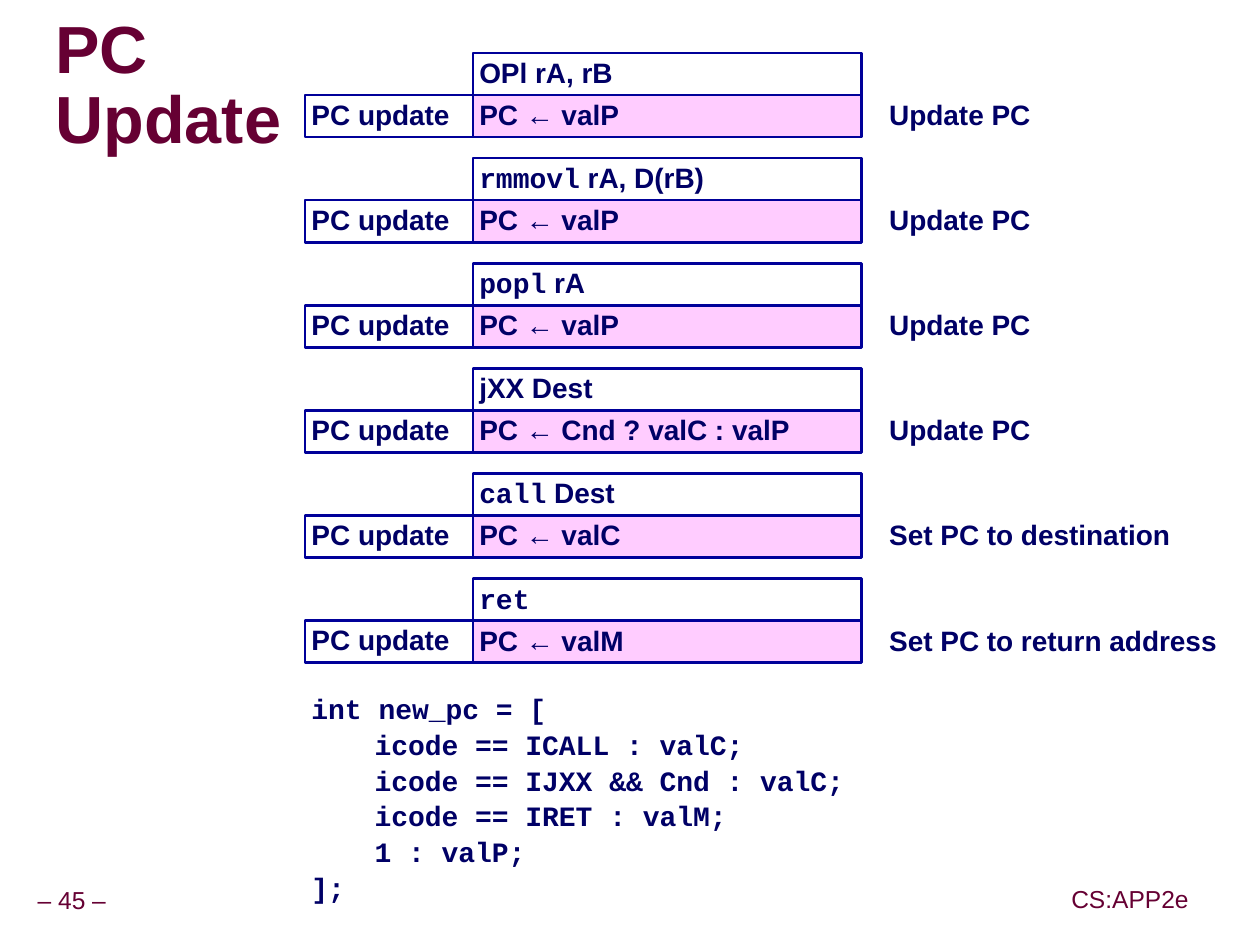
"""Build the PC Update slide: the update step of six instructions and its HCL code."""
import pptx
import pptx.dml.color
import pptx.enum.shapes
import pptx.enum.text
import pptx.util
from lxml import etree
from pptx.util import Inches, Pt

RGBColor = pptx.dml.color.RGBColor
Align = pptx.enum.text.PP_ALIGN
Anchor = pptx.enum.text.MSO_ANCHOR

MAROON = RGBColor(0x66, 0x00, 0x33)
NAVY = RGBColor(0x00, 0x00, 0x66)
BORDER = RGBColor(0x00, 0x00, 0x99)
PINK = RGBColor(0xFF, 0xCC, 0xFF)
SANS = "Arial"
MONO = "Courier New"

TITLE = "PC\vUpdate"
STAGE = "PC update"
INSTRUCTIONS = [
    ([("OPl rA, rB", SANS)], "PC ← valP", "Update PC"),
    ([("rmmovl", MONO), (" rA, D(rB)", SANS)], "PC ← valP", "Update PC"),
    ([("popl", MONO), (" rA", SANS)], "PC ← valP", "Update PC"),
    ([("jXX Dest", SANS)], "PC ← Cnd ? valC : valP", "Update PC"),
    ([("call", MONO), (" Dest", SANS)], "PC ← valC", "Set PC to destination"),
    ([("ret", MONO)], "PC ← valM", "Set PC to return address"),
]
CODE = [
    "int new_pc = [",
    "\ticode == ICALL : valC;",
    "\ticode == IJXX && Cnd : valC;",
    "\ticode == IRET : valM;",
    "\t1 : valP;",
    "];",
]
FOOTERS = [("– 45 –", 0.24, 6.99, 0.66), ("CS:APP2e", 8.44, 6.98, 1.04)]

STAGE_LEFT, STAGE_WIDTH = 2.42, 1.33
STEP_LEFT, STEP_WIDTH = 3.75, 3.08
NOTE_LEFT = 7
FIRST_TOP = 0.42
ROW_HEIGHT = 1 / 3
GROUP_PITCH = 2.5 * ROW_HEIGHT


def set_frame(shape, anchor=Anchor.TOP, wrap=True, inset=0.05):
    """Set margins, anchor and wrapping, and return the text frame."""
    frame = shape.text_frame
    frame.margin_left = frame.margin_right = Inches(inset)
    frame.margin_top = frame.margin_bottom = Inches(inset)
    frame.vertical_anchor = anchor
    frame.word_wrap = wrap
    return frame


def format_paragraph(paragraph, font=SANS, size=16, color=NAVY, bold=True,
                     spacing=0.9, align=Align.LEFT):
    """Set the font and spacing of a whole paragraph."""
    paragraph.font.name = font
    paragraph.font.size = Pt(size)
    paragraph.font.bold = bold
    paragraph.font.color.rgb = color
    paragraph.line_spacing = spacing
    paragraph.alignment = align


def add_label(slide, left, top, width, height, text, anchor=Anchor.TOP,
              wrap=True, **style):
    """Add a text box with one paragraph."""
    box = slide.shapes.add_textbox(Inches(left), Inches(top), Inches(width), Inches(height))
    paragraph = set_frame(box, anchor, wrap).paragraphs[0]
    paragraph.text = text
    format_paragraph(paragraph, **style)


def add_cell(slide, left, top, width, runs, fill=None, anchor=Anchor.TOP):
    """Add a bordered rectangle holding runs of (text, font)."""
    cell = slide.shapes.add_shape(
        pptx.enum.shapes.MSO_SHAPE.RECTANGLE,
        Inches(left), Inches(top), Inches(width), Inches(ROW_HEIGHT))
    cell.shadow.inherit = False
    if fill is None:
        cell.fill.background()
    else:
        cell.fill.solid()
        cell.fill.fore_color.rgb = fill
    cell.line.color.rgb = BORDER
    cell.line.width = Pt(1.5)
    paragraph = set_frame(cell, anchor).paragraphs[0]
    format_paragraph(paragraph)
    for text, font in runs:
        run = paragraph.add_run()
        run.text = text
        run.font.name = font


def add_title(slide):
    """Fill the title and give its letters a grey shadow."""
    title = slide.shapes.title
    title.left, title.top = Inches(0.44), Inches(0.27)
    title.width, title.height = Inches(9.52), Inches(0.85)
    frame = set_frame(title, Anchor.MIDDLE, inset=0)
    frame.auto_size = pptx.enum.text.MSO_AUTO_SIZE.NONE
    paragraph = frame.paragraphs[0]
    paragraph.text = TITLE
    format_paragraph(paragraph, size=38, color=MAROON, spacing=0.87)
    namespace = "http://schemas.openxmlformats.org/drawingml/2006/main"
    for run in paragraph.runs:
        run.font.color.rgb = MAROON
        effects = etree.fromstring(
            f'<a:effectLst xmlns:a="{namespace}">'
            '<a:outerShdw dist="53882" dir="2700000" algn="ctr">'
            '<a:srgbClr val="969696"/></a:outerShdw></a:effectLst>')
        run.font.fill._xPr.append(effects)


def add_code(slide):
    """Add the HCL code, one paragraph a line."""
    box = slide.shapes.add_textbox(
        Inches(STAGE_LEFT), Inches(5.42), Inches(5.83), Inches(1.7))
    frame = set_frame(box)
    frame.text = "\n".join(CODE)
    for paragraph in frame.paragraphs:
        format_paragraph(paragraph, font=MONO, spacing=1.06)


def main():
    """Build and save the slide."""
    presentation = pptx.Presentation()
    presentation.slide_width = Inches(9.99)
    presentation.slide_height = Inches(7.49)
    slide = presentation.slides.add_slide(presentation.slide_layouts[5])
    add_title(slide)
    for index, (instruction, step, note) in enumerate(INSTRUCTIONS):
        top = FIRST_TOP + index * GROUP_PITCH
        step_top = top + ROW_HEIGHT
        add_cell(slide, STEP_LEFT, top, STEP_WIDTH, instruction)
        add_cell(slide, STEP_LEFT, step_top, STEP_WIDTH, [(step, SANS)], fill=PINK)
        add_cell(slide, STAGE_LEFT, step_top, STAGE_WIDTH, [(STAGE, SANS)],
                 anchor=Anchor.MIDDLE)
        add_label(slide, NOTE_LEFT, step_top, STEP_WIDTH, ROW_HEIGHT, note)
    add_code(slide)
    for text, left, top, width in FOOTERS:
        add_label(slide, left, top, width, 0.31, text, anchor=Anchor.MIDDLE,
                  wrap=False, size=14, color=MAROON, bold=False, align=Align.CENTER)
    presentation.save("out.pptx")


if __name__ == "__main__":
    main()
